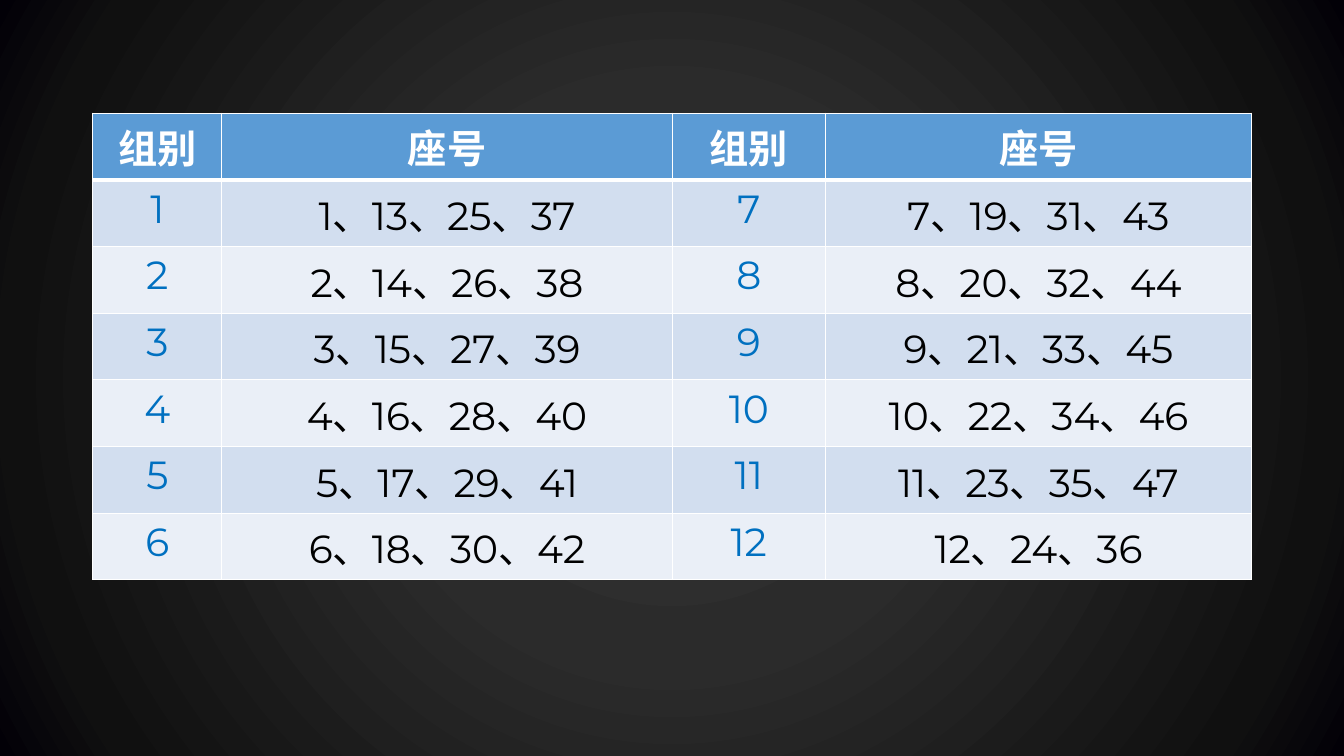
from pptx import Presentation
from pptx.dml.color import RGBColor
from pptx.enum.lang import MSO_LANGUAGE_ID as LANG
from pptx.enum.text import PP_ALIGN as ALIGN
from pptx.oxml import parse_xml
from pptx.oxml.ns import nsdecls, qn
from pptx.util import Cm, Pt

FONT = "Montserrat"
COL_WIDTHS = (3.25, 11.35, 3.86, 10.74)
ROW_HEIGHT = 1.68
GROUP_MARGIN = 0.14
SEAT_MARGIN = 0.32
GROUPS = 12
LAST_SEAT = 47
HEADER_FILL = "5B9BD5"
BAND_FILLS = ("D2DEEF", "EAEFF7")
GLOW = ((0, "363636"), (37, "2B2B2B"), (86, "101010"), (100, "020007"))


def rgb(color):
    """Turn a hex string into a colour."""
    return RGBColor.from_string(color)


def set_background(s, stops):
    """Fill the slide with a gradient that runs outwards from its centre."""
    s.background.fill.solid()
    bg = s.element.find(".//" + qn("p:bgPr"))
    gs = "".join(
        f'<a:gs pos="{pos * 1000}"><a:srgbClr val="{color}"/></a:gs>'
        for pos, color in stops
    )
    bg.replace(bg[0], parse_xml(
        f'<a:gradFill {nsdecls("a")} rotWithShape="1"><a:gsLst>{gs}</a:gsLst>'
        '<a:path path="circle"><a:fillToRect l="50000" t="50000" r="50000" b="50000"/>'
        '</a:path></a:gradFill>'
    ))


def set_borders(cell, bottom=1, top=1):
    """Draw white lines of the given widths around a cell."""
    tc_pr = cell._tc.get_or_add_tcPr()
    for i, (side, width) in enumerate(zip("LRTB", (1, 1, top, bottom))):
        tc_pr.insert(i, parse_xml(
            f'<a:ln{side} {nsdecls("a")} w="{Pt(width)}"><a:solidFill>'
            f'<a:srgbClr val="FFFFFF"/></a:solidFill></a:ln{side}>'
        ))


def write_cell(cell, text, color, fill, margin=SEAT_MARGIN, bold=False):
    """Fill a cell and centre its text below the given top margin."""
    cell.fill.solid()
    cell.fill.fore_color.rgb = rgb(fill)
    cell.margin_top, cell.margin_bottom = Cm(margin), 0
    p = cell.text_frame.paragraphs[0]
    p.alignment = ALIGN.CENTER
    r = p.add_run()
    r.text = text
    font = r.font
    font.name, font.size, font.bold = FONT, Pt(28), bold
    font.color.rgb = rgb(color)
    font.language_id = LANG.SIMPLIFIED_CHINESE
    font._element.find(qn("a:latin")).addnext(
        parse_xml(f'<a:ea {nsdecls("a")} typeface="{FONT}"/>')
    )


def seats(group):
    """List the seat numbers of a group."""
    return "、".join(str(n) for n in range(group, LAST_SEAT + 1, GROUPS))


def add_seating_table(s):
    """Add the table of groups and their seats, in two halves side by side."""
    half = GROUPS // 2
    table = s.shapes.add_table(
        half + 1, len(COL_WIDTHS), Cm(2.34), Cm(2.85),
        Cm(sum(COL_WIDTHS)), Cm(ROW_HEIGHT * (half + 1)),
    ).table
    for col, width in zip(table.columns, COL_WIDTHS):
        col.width = Cm(width)
    for i, heading in enumerate(("组别", "座号") * 2):
        cell = table.cell(0, i)
        write_cell(cell, heading, "FFFFFF", HEADER_FILL, bold=True)
        set_borders(cell, bottom=3)
    for row in range(1, half + 1):
        fill = BAND_FILLS[(row - 1) % 2]
        for col, group in ((0, row), (2, row + half)):
            write_cell(table.cell(row, col), str(group), "0070C0", fill, GROUP_MARGIN)
            write_cell(table.cell(row, col + 1), seats(group), "000000", fill)
        for cell in table.rows[row].cells:
            set_borders(cell, top=3 if row == 1 else 1)


def main():
    """Build the slide and save it."""
    prs = Presentation()
    prs.slide_width, prs.slide_height = Cm(33.87), Cm(19.05)
    s = prs.slides.add_slide(prs.slide_layouts[6])
    set_background(s, GLOW)
    add_seating_table(s)
    prs.save("out.pptx")


if __name__ == "__main__":
    main()
